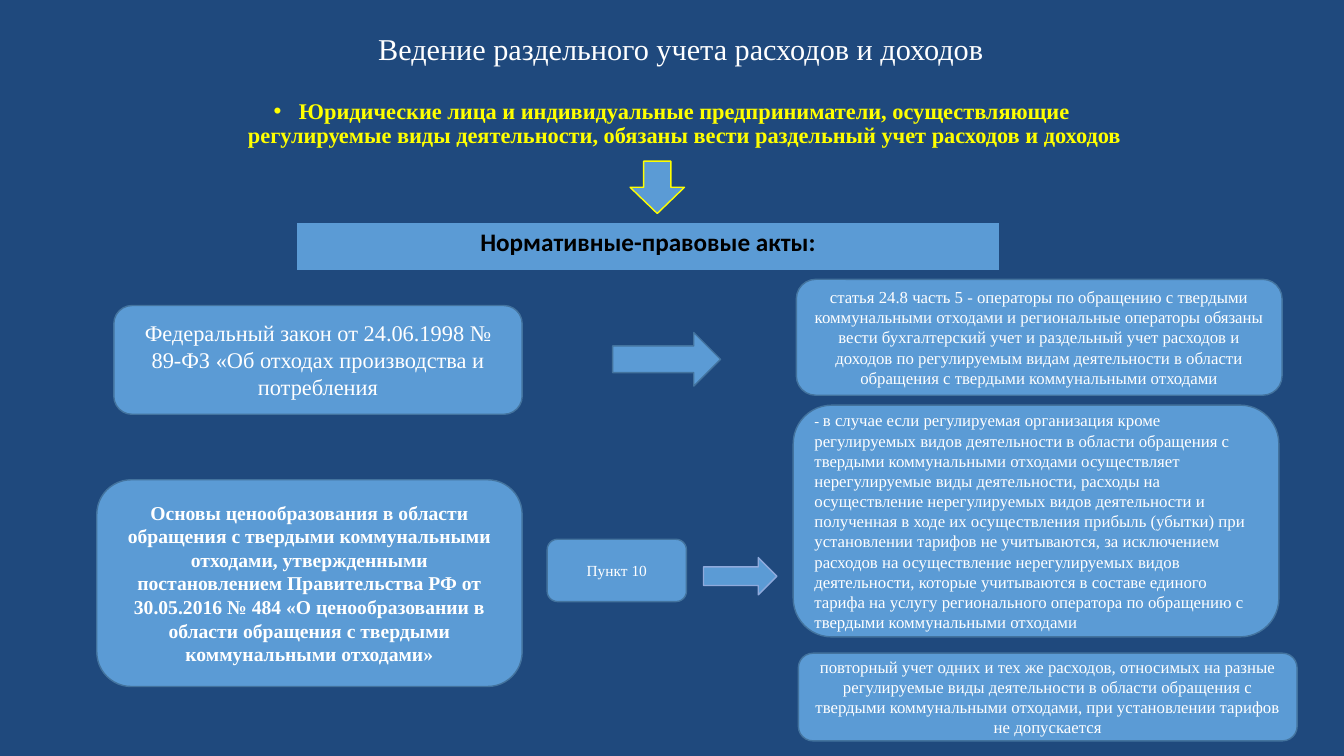
"""Build a slide on separate accounting of income and expenses."""
from dataclasses import dataclass

from pptx import Presentation
from pptx.dml.color import RGBColor
from pptx.enum.shapes import MSO_SHAPE as Shape
from pptx.enum.text import MSO_ANCHOR as Anchor, PP_ALIGN as Align
from pptx.oxml.ns import qn
from pptx.util import Cm, Pt

NAVY, BLUE, EDGE, PALE = "1F497D", "5B9BD5", "43739E", "8FAADC"
WHITE, YELLOW, BLACK = "FFFFFF", "FFFF00", "000000"
SERIF, SANS = "Times New Roman", "Calibri"


@dataclass(frozen=True)
class Box:
    """Geometry in centimetres."""
    x: float
    y: float
    w: float
    h: float

    def lengths(self) -> tuple:
        return Cm(self.x), Cm(self.y), Cm(self.w), Cm(self.h)


@dataclass(frozen=True)
class Card:
    """Rounded box with text."""
    box: Box
    text: str
    size: float = 12
    bold: bool = False
    align: Align = Align.CENTER
    lead: str = ""


@dataclass(frozen=True)
class Arrow:
    """Block arrow."""
    box: Box
    kind: Shape = Shape.RIGHT_ARROW
    line: str = EDGE


CARDS = [
    Card(Box(2.87, 7.7, 10.29, 2.74),
         "Федеральный закон от 24.06.1998 № 89-ФЗ «Об отходах производства и потребления", 16),
    Card(Box(2.44, 12.09, 10.72, 5.21),
         "Основы ценообразования в области обращения с твердыми коммунальными отходами, "
         "утвержденными постановлением Правительства РФ от 30.05.2016 № 484 "
         "«О ценообразовании в области обращения с твердыми коммунальными отходами»", 14, True),
    Card(Box(13.79, 13.59, 3.51, 1.57), "Пункт 10", 11),
    Card(Box(20.07, 7.04, 12.24, 2.92),
         "статья 24.8 часть 5 - операторы по обращению с твердыми коммунальными отходами "
         "и региональные операторы обязаны вести бухгалтерский учет и раздельный учет "
         "расходов и доходов по регулируемым видам деятельности в области обращения "
         "с твердыми коммунальными отходами"),
    Card(Box(19.99, 10.21, 12.24, 5.84),
         "в случае если регулируемая организация кроме регулируемых видов деятельности "
         "в области обращения с твердыми коммунальными отходами осуществляет нерегулируемые "
         "виды деятельности, расходы на осуществление нерегулируемых видов деятельности "
         "и полученная в ходе их осуществления прибыль (убытки) при установлении тарифов "
         "не учитываются, за исключением расходов на осуществление нерегулируемых видов "
         "деятельности, которые учитываются в составе единого тарифа на услугу регионального "
         "оператора по обращению с твердыми коммунальными отходами",
         align=Align.LEFT, lead="- "),
    Card(Box(20.12, 16.46, 12.57, 2.21),
         "повторный учет одних и тех же расходов, относимых на разные регулируемые виды "
         "деятельности в области обращения с твердыми коммунальными отходами, "
         "при установлении тарифов не допускается"),
]

ARROWS = [
    Arrow(Box(15.88, 4.06, 1.37, 1.32), Shape.DOWN_ARROW, YELLOW),
    Arrow(Box(15.44, 8.38, 2.72, 1.35)),
    Arrow(Box(17.73, 14.05, 1.85, 0.94), line=PALE),
]


def rgb(code: str) -> RGBColor:
    return RGBColor.from_string(code)


def style_run(r, size: float, color: str = WHITE, bold: bool = False, font: str = SERIF) -> None:
    r.font.size, r.font.bold, r.font.name = Pt(size), bold, font
    r.font.color.rgb = rgb(color)


def add_block(s, kind: Shape, box: Box, line: str):
    sp = s.shapes.add_shape(kind, *box.lengths())
    sp.shadow.inherit = False
    sp.fill.solid()
    sp.fill.fore_color.rgb = rgb(BLUE)
    sp.line.color.rgb = rgb(line)
    sp.line.width = Pt(1)
    return sp


def add_card(s, card: Card) -> None:
    tf = add_block(s, Shape.ROUNDED_RECTANGLE, card.box, EDGE).text_frame
    tf.word_wrap = True
    tf.vertical_anchor = Anchor.MIDDLE
    p = tf.paragraphs[0]
    p.alignment = card.align
    p.text = card.lead or card.text
    style_run(p.runs[0], 10.5 if card.lead else card.size, bold=card.bold)
    if card.lead:
        r = p.add_run()
        r.text = card.text
        style_run(r, card.size, bold=card.bold)


def add_label(s, box: Box, text: str, size: float, color: str, bold: bool, anchor: Anchor):
    tf = s.shapes.add_textbox(*box.lengths()).text_frame
    tf.word_wrap = True
    tf.vertical_anchor = anchor
    p = tf.paragraphs[0]
    p.text = text
    p.alignment = Align.CENTER
    p.line_spacing = 0.9
    style_run(p.runs[0], size, color, bold)
    return p


def add_bullet(p, indent: int) -> None:
    p.space_before = Pt(10)
    pPr = p._p.get_or_add_pPr()
    pPr.set("marL", str(indent))
    pPr.set("indent", str(-indent))
    font = pPr.makeelement(qn("a:buFont"), {"typeface": "Arial"})
    mark = pPr.makeelement(qn("a:buChar"), {"char": "•"})
    pPr.extend([font, mark])


def add_banner(s, box: Box, text: str) -> None:
    table = s.shapes.add_table(1, 1, *box.lengths()).table
    table.first_row = table.horz_banding = False
    cell = table.cell(0, 0)
    tcPr = cell._tc.get_or_add_tcPr()
    for side in ("lnL", "lnR", "lnT", "lnB"):
        ln = tcPr.makeelement(qn(f"a:{side}"), {"w": "0"})
        ln.append(ln.makeelement(qn("a:noFill"), {}))
        tcPr.append(ln)
    cell.fill.solid()
    cell.fill.fore_color.rgb = rgb(BLUE)
    p = cell.text_frame.paragraphs[0]
    p.text = text
    p.alignment = Align.CENTER
    style_run(p.runs[0], 18, BLACK, True, SANS)


def main() -> None:
    prs = Presentation()
    prs.slide_width, prs.slide_height = Cm(33.87), Cm(19.05)
    s = prs.slides.add_slide(prs.slide_layouts[6])
    s.background.fill.solid()
    s.background.fill.fore_color.rgb = rgb(NAVY)
    add_label(s, Box(2.77, 0.86, 28.78, 0.86),
              "Ведение раздельного учета расходов и доходов", 21.6, WHITE, False, Anchor.MIDDLE)
    duty = add_label(s, Box(5.08, 2.39, 23.7, 2.74),
                     "Юридические лица и индивидуальные предприниматели, осуществляющие "
                     "регулируемые виды деятельности, обязаны вести раздельный учет "
                     "расходов и доходов", 16, YELLOW, True, Anchor.TOP)
    add_bullet(duty, Cm(0.64))
    add_banner(s, Box(7.49, 5.61, 17.68, 1.19), "Нормативные-правовые акты:")
    for card in CARDS:
        add_card(s, card)
    for arrow in ARROWS:
        add_block(s, arrow.kind, arrow.box, arrow.line)
    prs.save("out.pptx")


if __name__ == "__main__":
    main()
